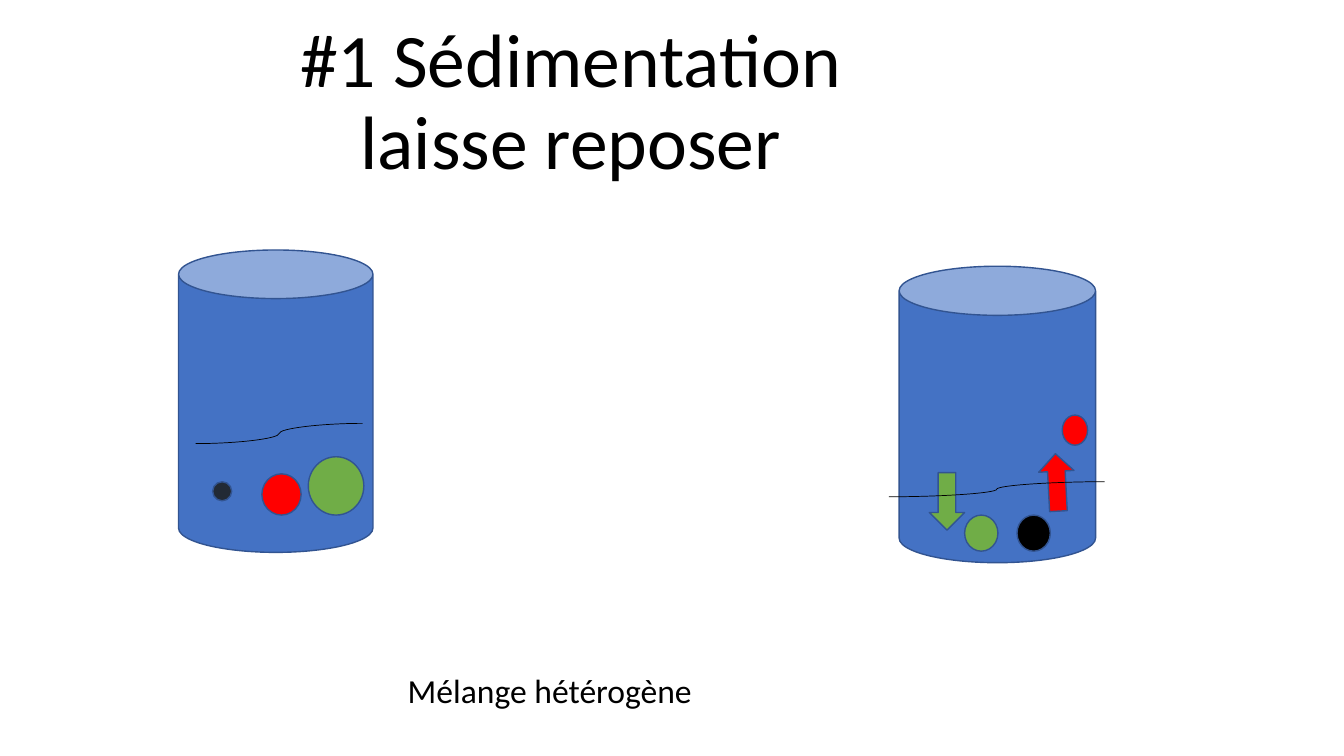
from dataclasses import dataclass

from lxml import etree
from pptx import Presentation
from pptx.dml.color import RGBColor
from pptx.enum.shapes import MSO_CONNECTOR, MSO_SHAPE
from pptx.enum.text import MSO_ANCHOR, PP_ALIGN
from pptx.oxml.ns import qn
from pptx.util import Cm, Pt

CAN = MSO_SHAPE.CAN
ELLIPSE = MSO_SHAPE.OVAL
DOWN_ARROW = MSO_SHAPE.DOWN_ARROW
CURVE = MSO_CONNECTOR.CURVE
TOP, BOTTOM = MSO_ANCHOR.TOP, MSO_ANCHOR.BOTTOM
CENTER = PP_ALIGN.CENTER


@dataclass(frozen=True)
class Theme:
    font: str = "Calibri"
    title_size: int = 54
    caption_size: int = 24
    outline_width: float = 1
    surface_width: float = 0.5
    black: str = "000000"
    water: str = "4472C4"
    outline: str = "325491"
    dark: str = "222A35"
    red: str = "FF0000"
    green: str = "70AD47"


THEME = Theme()


def rgb(color):
    return RGBColor.from_string(color)


def apply_format(target, values):
    for name, value in values.items():
        setattr(target, name, value)


def add_text(slide, box, text, size, anchor):
    frame = slide.shapes.add_textbox(*map(Cm, box)).text_frame
    apply_format(frame, {"word_wrap": True, "vertical_anchor": anchor})
    paragraph = frame.paragraphs[0]
    paragraph.text = text
    apply_format(paragraph, {"alignment": CENTER, "line_spacing": 0.9})
    for run in paragraph.runs:
        apply_format(run.font, {"name": THEME.font, "size": Pt(size)})
        run.font.color.rgb = rgb(THEME.black)


def add_part(slide, kind, box, color, rotation=0):
    part = slide.shapes.add_shape(kind, *map(Cm, box))
    part.rotation = rotation
    part.shadow.inherit = False
    part.fill.solid()
    part.fill.fore_color.rgb = rgb(color)
    part.line.color.rgb = rgb(THEME.outline)
    part.line.width = Pt(THEME.outline_width)


def add_surface(slide, ends):
    surface = slide.shapes.add_connector(CURVE, *map(Cm, ends))
    surface.line.color.rgb = rgb(THEME.black)
    surface.line.width = Pt(THEME.surface_width)
    etree.SubElement(surface._element.spPr, qn("a:effectLst"))


def main():
    deck = Presentation()
    apply_format(deck, {"slide_width": Cm(33.87), "slide_height": Cm(19.05)})
    slide = deck.slides.add_slide(deck.slide_layouts[6])

    add_text(slide, (4.24, 3.12, 20.29, 1.68), "#1 Sédimentation\vlaisse reposer",
             THEME.title_size, BOTTOM)
    add_text(slide, (1.88, 16.87, 23.95, 1.24), "Mélange hétérogène",
             THEME.caption_size, TOP)

    containers = [(4.5, 6.3, 4.9, 7.62), (22.66, 6.71, 4.95, 7.47)]
    for box in containers:
        add_part(slide, CAN, box, THEME.water)

    particles = [
        ((5.36, 12.14, 0.48, 0.48), THEME.dark),
        ((6.6, 11.94, 0.99, 1.04), THEME.red),
        ((7.77, 11.51, 1.4, 1.47), THEME.green),
        ((24.31, 12.98, 0.84, 0.91), THEME.green),
        ((25.63, 12.98, 0.84, 0.91), THEME.black),
        ((26.77, 10.46, 0.64, 0.76), THEME.red),
    ]
    for box, color in particles:
        add_part(slide, ELLIPSE, box, color)

    add_part(slide, DOWN_ARROW, (23.42, 11.91, 0.89, 1.45), THEME.green)
    add_part(slide, DOWN_ARROW, (26.19, 11.43, 0.89, 1.45), THEME.red, 177)

    surfaces = [(4.93, 11.18, 9.14, 10.67), (22.4, 12.52, 27.84, 12.14)]
    for ends in surfaces:
        add_surface(slide, ends)

    deck.save("out.pptx")


if __name__ == "__main__":
    main()
